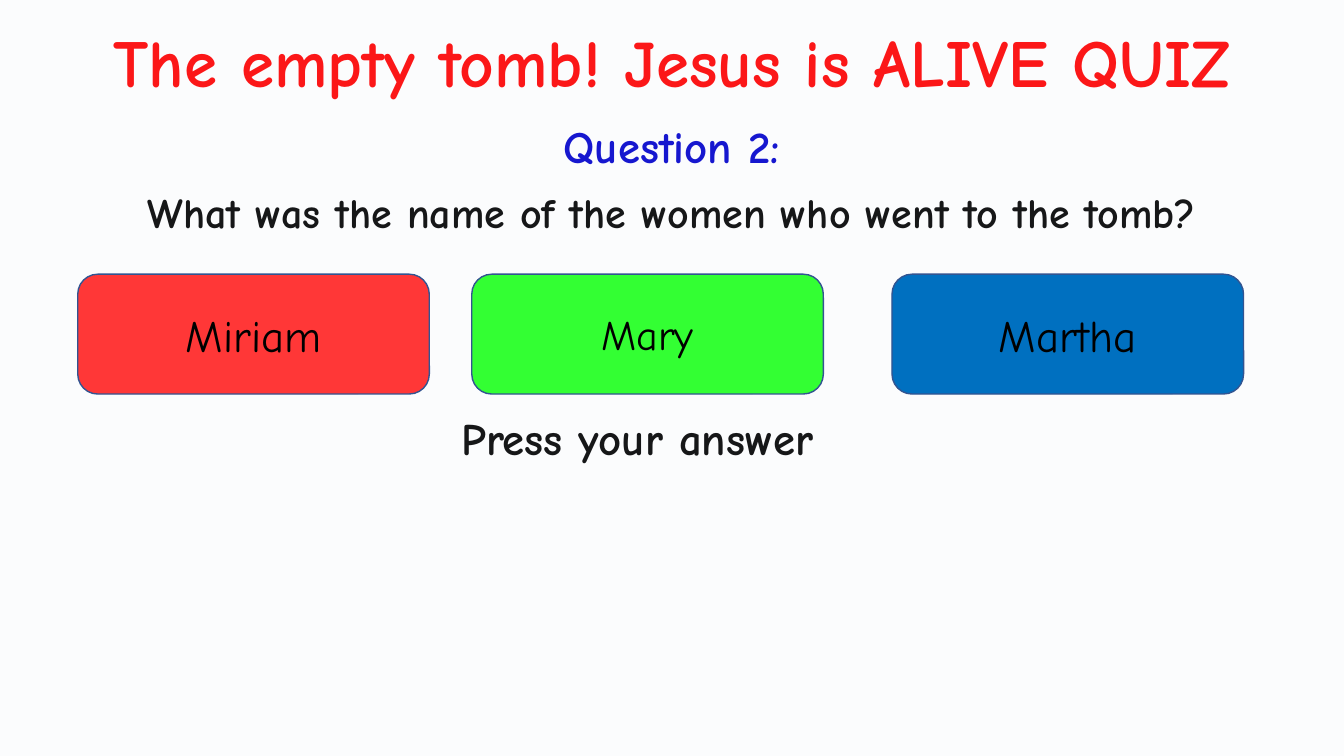
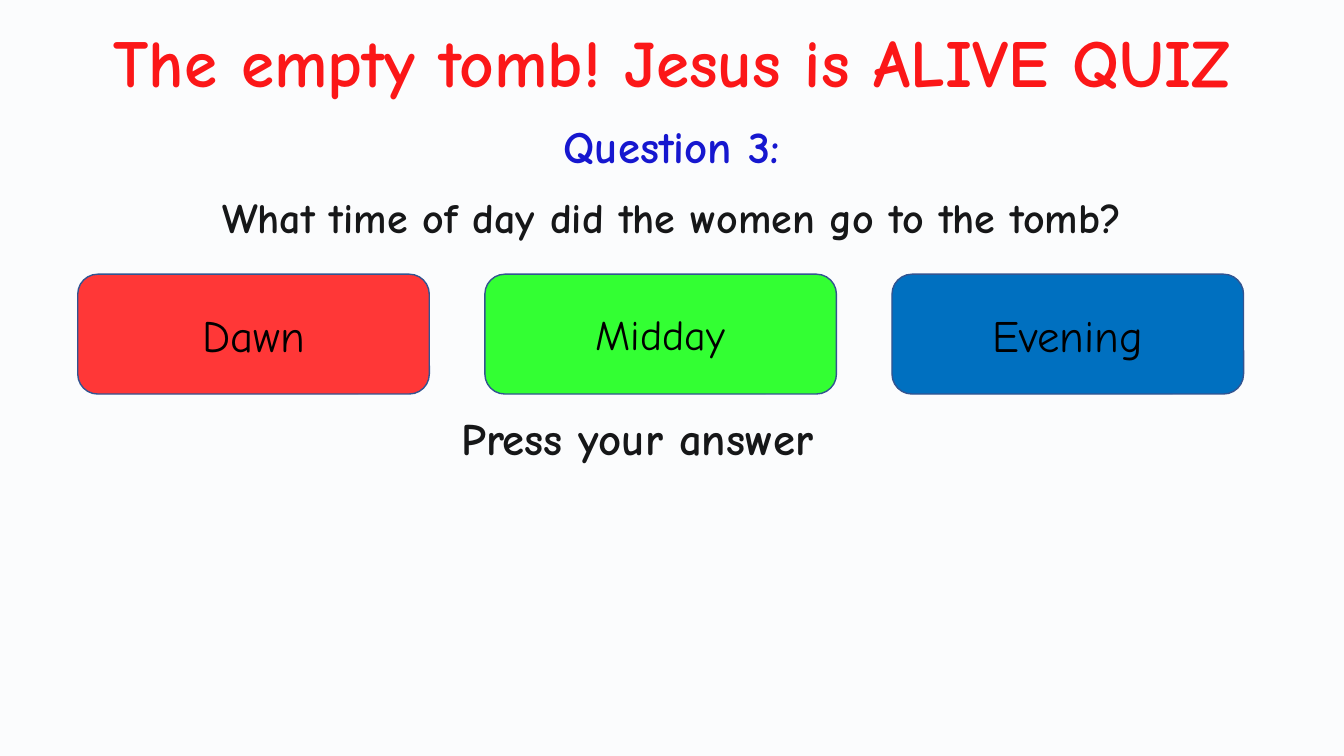
from dataclasses import dataclass

from lxml.etree import SubElement
from pptx import Presentation
from pptx.dml.color import RGBColor as Rgb
from pptx.enum.shapes import MSO_SHAPE as Shape
from pptx.enum.text import MSO_ANCHOR as Anchor, MSO_AUTO_SIZE as AutoSize, PP_ALIGN as Align
from pptx.oxml.ns import qn
from pptx.util import Cm, Pt


@dataclass(frozen=True)
class Theme:
    font: str = "Comic Neue"
    title: Rgb = Rgb(0xFF, 0x00, 0x00)
    number: Rgb = Rgb(0x00, 0x00, 0xCC)
    text: Rgb = Rgb(0x00, 0x00, 0x00)
    outline: Rgb = Rgb(0x32, 0x54, 0x91)
    veil: Rgb = Rgb(0xDA, 0xE3, 0xF3)
    veil_opacity: int = 10
    # Fill and text size of each answer button, from left to right
    answers: tuple = (
        (Rgb(0xFF, 0x37, 0x37), 32),
        (Rgb(0x33, 0xFF, 0x33), 30),
        (Rgb(0x00, 0x70, 0xC0), 32),
    )
    title_size: int = 48
    label_size: int = 32
    question_size: int = 30


@dataclass(frozen=True)
class Box:
    """A region of the slide, in centimetres."""
    left: float
    top: float
    width: float
    height: float

    def place(self, shape):
        shape.left, shape.top = Cm(self.left), Cm(self.top)
        shape.width, shape.height = Cm(self.width), Cm(self.height)

    def lengths(self):
        return Cm(self.left), Cm(self.top), Cm(self.width), Cm(self.height)


@dataclass(frozen=True)
class Question:
    number: int
    text: str
    answers: tuple
    top: float
    middle_shift: float = 0


THEME = Theme()
SLIDE = Box(0, 0, 33.87, 19.05)
TITLE = Box(0, 0.38, SLIDE.width, 2.31)
NUMBER = Box(11.33, 2.87, 11.2, 1.63)
ANSWERS = Box(1.96, 6.91, 29.38, 3.02)
PROMPT = Box(11.38, 10.39, 17.09, 1.83)
BUTTON_WIDTH = 8.86
QUESTION_HEIGHT = 1.83

QUIZ_TITLE = "The empty tomb! Jesus is ALIVE QUIZ"
QUESTIONS = (
    Question(2, "What was the name of the women who went to the tomb?",
             ("Miriam", "Mary", "Martha"), top=4.78, middle_shift=-0.33),
    Question(3, "What time of day did the women go to the tomb?",
             ("Dawn", "Midday", "Evening"), top=4.9),
)


def write(shape, text, size, color, bold=True, align=Align.CENTER, anchor=Anchor.TOP):
    """Put one formatted line into a shape and return its paragraph."""
    frame = shape.text_frame
    frame.word_wrap = True
    frame.auto_size = AutoSize.NONE
    frame.vertical_anchor = anchor
    paragraph = frame.paragraphs[0]
    paragraph.alignment = align
    run = paragraph.add_run()
    run.text = text
    font = run.font
    font.name, font.size, font.bold = THEME.font, Pt(size), bold
    font.color.rgb = color
    return paragraph


def add_title(slide, box):
    title = slide.shapes.title
    box.place(title)
    write(title, QUIZ_TITLE, THEME.title_size, THEME.title)


def add_question(slide, box, text):
    body = slide.placeholders[1]
    box.place(body)
    paragraph = write(body, text, THEME.question_size, THEME.text)
    paragraph.line_spacing = Pt(30)
    paragraph.space_before = Pt(10)
    # A question is a plain line, without bullet or indent
    properties = paragraph._p.get_or_add_pPr()
    properties.set("marL", "0")
    properties.set("indent", "0")
    SubElement(properties, qn("a:buNone"))


def add_number(slide, box, number):
    label = slide.shapes.add_textbox(*box.lengths())
    write(label, f"Question {number}:", THEME.label_size, THEME.number)


def add_prompt(slide, box):
    prompt = slide.shapes.add_textbox(*box.lengths())
    paragraph = write(prompt, "Press your answer", THEME.label_size, THEME.text, align=Align.LEFT)
    paragraph.line_spacing = 0.9
    paragraph.space_before = Pt(7.5)


def add_filled_shape(slide, kind, box, color):
    shape = slide.shapes.add_shape(kind, *box.lengths())
    shape.shadow.inherit = False
    shape.fill.solid()
    shape.fill.fore_color.rgb = color
    return shape


def add_veil(slide, box):
    """Lay a pale, nearly transparent tint over the text."""
    veil = add_filled_shape(slide, Shape.RECTANGLE, box, THEME.veil)
    veil.line.fill.background()
    color = veil.fill._xPr.find(qn("a:solidFill"))[0]
    SubElement(color, qn("a:alpha")).set("val", str(THEME.veil_opacity * 1000))


def add_answers(slide, box, answers, middle_shift):
    """Spread the answer buttons evenly over the box."""
    step = (box.width - BUTTON_WIDTH) / (len(answers) - 1)
    for index, (answer, (color, size)) in enumerate(zip(answers, THEME.answers)):
        shift = middle_shift if index == 1 else 0
        place = Box(box.left + index * step + shift, box.top, BUTTON_WIDTH, box.height)
        button = add_filled_shape(slide, Shape.ROUNDED_RECTANGLE, place, color)
        button.line.color.rgb = THEME.outline
        button.line.width = Pt(1)
        write(button, answer, size, THEME.text, bold=False, anchor=Anchor.MIDDLE)


def add_question_slide(presentation, question):
    slide = presentation.slides.add_slide(presentation.slide_layouts[1])
    # Text
    add_title(slide, TITLE)
    add_question(slide, Box(0, question.top, SLIDE.width, QUESTION_HEIGHT), question.text)
    add_prompt(slide, PROMPT)
    add_number(slide, NUMBER, question.number)
    # Tint, with the buttons in front of it
    add_veil(slide, SLIDE)
    add_answers(slide, ANSWERS, question.answers, question.middle_shift)


def main():
    presentation = Presentation()
    presentation.slide_width, presentation.slide_height = Cm(SLIDE.width), Cm(SLIDE.height)
    for question in QUESTIONS:
        add_question_slide(presentation, question)
    presentation.save("out.pptx")


if __name__ == "__main__":
    main()
